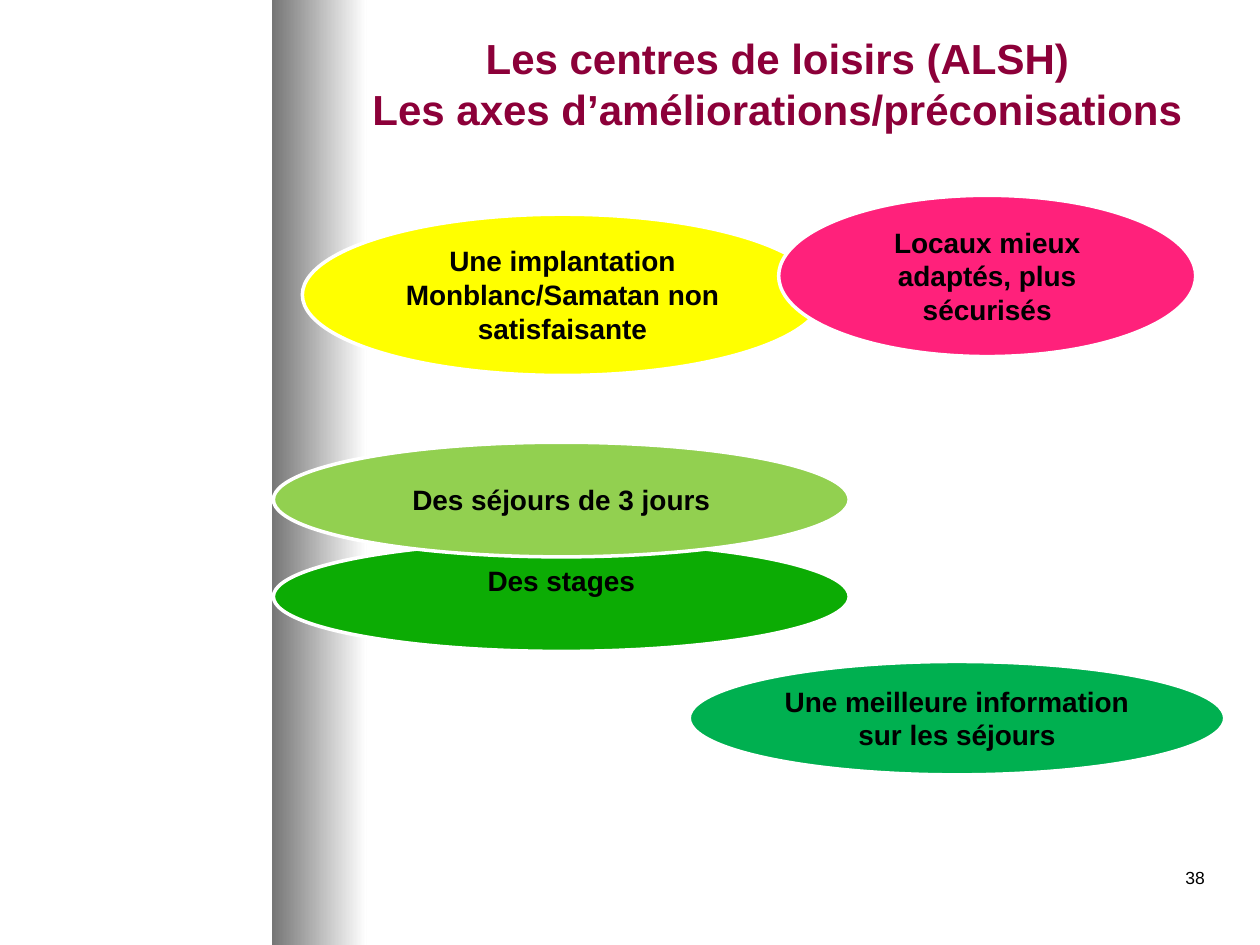
from pptx import Presentation
from pptx.dml.color import RGBColor
from pptx.enum.shapes import MSO_SHAPE
from pptx.enum.text import MSO_ANCHOR, MSO_AUTO_SIZE, PP_ALIGN
from pptx.util import Pt

OVAL, RECT = MSO_SHAPE.OVAL, MSO_SHAPE.RECTANGLE
TOP, MIDDLE = MSO_ANCHOR.TOP, MSO_ANCHOR.MIDDLE
CENTER, RIGHT = PP_ALIGN.CENTER, PP_ALIGN.RIGHT

COLORS = {
    "band": "767676", "white": "FFFFFF", "black": "000000", "title": "8C0039",
    "yellow": "FFFF00", "pink": "FF217B", "teal": "00B050",
    "green": "0CAC04", "lime": "92D050",
}

# Content: lengths in points (left, top, width, height)
TITLE = ["Les centres de loisirs (ALSH)", "Les axes d’améliorations/préconisations"]
TITLE_BOX = (192.24, 18, 504, 59.04)
PAGE_NUMBER = "38"
NUMBER_BOX = (545.76, 491.76, 149.76, 36)
BAND_BOX = (155.52, 0, 54, 540)
PROPOSALS = [
    ("Une implantation Monblanc/Samatan non satisfaisante", "yellow", TOP,
     (172.8, 122.4, 297.36, 92.16)),
    ("Locaux mieux adaptés, plus sécurisés", "pink", TOP,
     (444.96, 111.6, 238.32, 92.16)),
    ("Une meilleure information sur les séjours", "teal", TOP,
     (393.84, 378, 306, 64.8)),
    ("Des stages", "green", TOP, (156.24, 309.6, 329.04, 62.64)),
    ("Des séjours de 3 jours", "lime", MIDDLE, (156.24, 252.72, 329.04, 65.52)),
]


def color(name):
    return RGBColor.from_string(COLORS[name])


def points(box):
    return [Pt(length) for length in box]


def write(frame, text, size, ink="black", bold=True, align=CENTER, anchor=TOP):
    frame.text = text
    frame_format = {"word_wrap": True, "auto_size": MSO_AUTO_SIZE.NONE,
                    "vertical_anchor": anchor}
    for key, value in frame_format.items():
        setattr(frame, key, value)
    paragraph = frame.paragraphs[0]
    paragraph.alignment = align
    for run in paragraph.runs:
        for key, value in {"name": "Arial", "size": Pt(size), "bold": bold}.items():
            setattr(run.font, key, value)
        run.font.color.rgb = color(ink)


def add_plain_shape(slide, kind, box):
    shape = slide.shapes.add_shape(kind, *points(box))
    shape.shadow.inherit = False
    return shape


def main():
    deck = Presentation()
    deck.slide_width, deck.slide_height = Pt(720), Pt(540)
    slide = deck.slides.add_slide(deck.slide_layouts[5])

    # Shaded band on the left
    band = add_plain_shape(slide, RECT, BAND_BOX)
    band.line.fill.background()
    band.fill.gradient()
    band.fill.gradient_angle = 0
    for stop, name, position in zip(band.fill.gradient_stops, ("band", "white"), (0, 1)):
        stop.color.rgb = color(name)
        stop.position = position

    # Title
    title = slide.shapes.title
    title.left, title.top, title.width, title.height = points(TITLE_BOX)
    write(title.text_frame, "\v".join(TITLE), 24, ink="title", anchor=MIDDLE)

    # Proposals, from back to front
    for text, fill, anchor, box in PROPOSALS:
        proposal = add_plain_shape(slide, OVAL, box)
        proposal.fill.solid()
        proposal.fill.fore_color.rgb = color(fill)
        proposal.line.color.rgb = color("white")
        proposal.line.width = Pt(2)
        write(proposal.text_frame, text, 16, anchor=anchor)

    # Page number
    number = slide.shapes.add_textbox(*points(NUMBER_BOX))
    write(number.text_frame, PAGE_NUMBER, 10, bold=False, align=RIGHT)

    deck.save("out.pptx")


if __name__ == "__main__":
    main()
